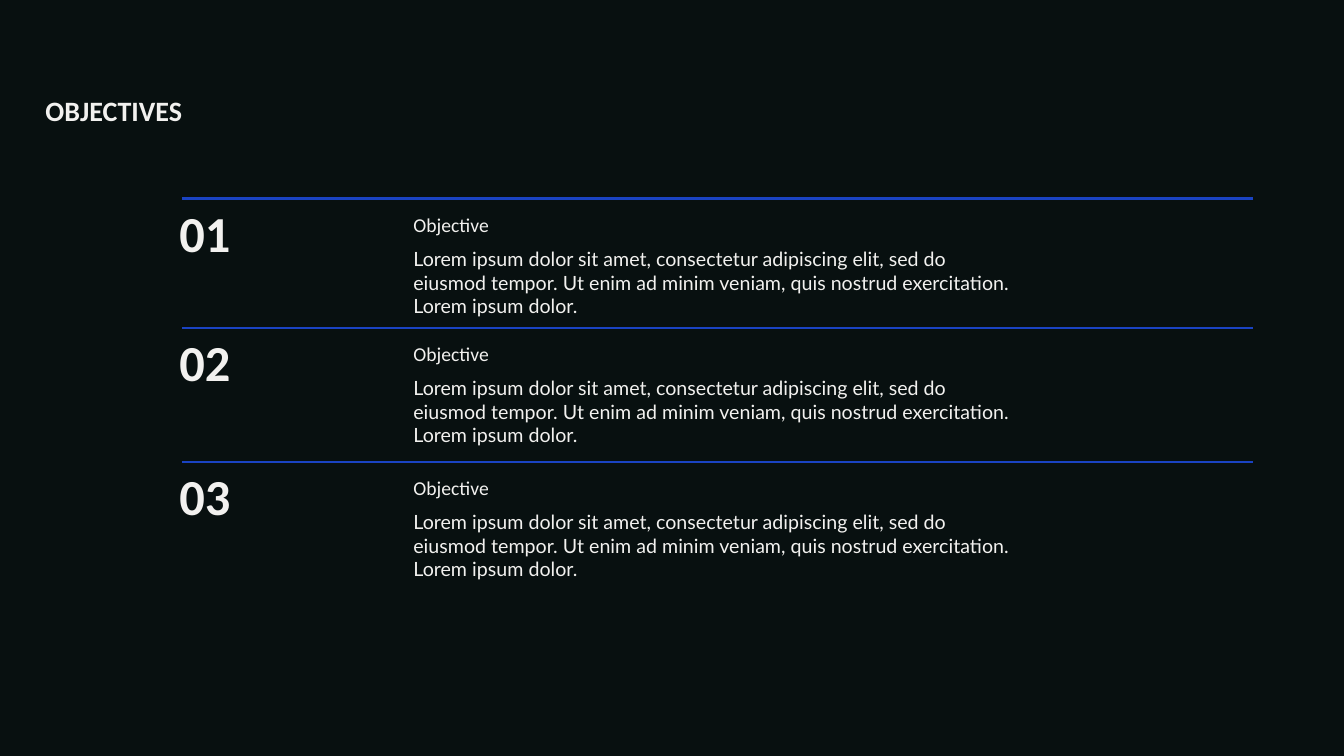
from lxml import etree
from pptx import Presentation
from pptx.dml.color import RGBColor
from pptx.enum import shapes, text
from pptx.oxml import ns
from pptx.util import Inches, Pt

TITLE = "OBJECTIVES"
DESCRIPTION = ("Lorem ipsum dolor sit amet, consectetur adipiscing elit, sed do "
               "eiusmod tempor. Ut enim ad minim veniam, quis nostrud exercitation. "
               "Lorem ipsum dolor.")
# number, heading, description, top of the row in inches
OBJECTIVES = [
    ("01", "Objective", DESCRIPTION, 1.97),
    ("02", "Objective", DESCRIPTION, 3.25),
    ("03", "Objective", DESCRIPTION, 4.58),
]
COLORS = {"background": "081010", "text": "F2F1EF", "rule": "1A43C2"}
RULE_LEFT, RULE_RIGHT = 1.81, 12.43
NUMBER_LEFT, DETAIL_LEFT = 1.78, 4.1


def color(name):
    return RGBColor.from_string(COLORS[name])


def write(box, words, size, font="Calibri", bold=False, spacing=1.0):
    """Fill a box with one left-aligned paragraph, without margins."""
    frame = box.text_frame
    frame.word_wrap = True
    frame.auto_size = text.MSO_AUTO_SIZE.NONE
    frame.vertical_anchor = text.MSO_ANCHOR.TOP
    frame.margin_left = frame.margin_right = 0
    frame.margin_top = frame.margin_bottom = 0
    paragraph = frame.paragraphs[0]
    paragraph.alignment = text.PP_ALIGN.LEFT
    paragraph.line_spacing = spacing
    paragraph.space_before = Pt(0)
    run = paragraph.add_run()
    run.text = words
    run.font.name = font
    run.font.size = Pt(size)
    run.font.bold = bold
    run.font.color.rgb = color("text")


def add_text(slide, left, top, width, height, words, size, **style):
    box = slide.shapes.add_textbox(Inches(left), Inches(top),
                                   Inches(width), Inches(height))
    write(box, words, size, **style)


def add_rule(slide, top):
    rule = slide.shapes.add_connector(
        shapes.MSO_CONNECTOR.STRAIGHT, Inches(RULE_LEFT), Inches(top),
        Inches(RULE_RIGHT), Inches(top))
    rule.line.color.rgb = color("rule")
    rule.line.width = Pt(1.5)
    etree.SubElement(rule._element.spPr, ns.qn("a:effectLst"))


def main():
    deck = Presentation()
    deck.slide_width, deck.slide_height = Inches(13.33), Inches(7.5)
    slide = deck.slides.add_slide(deck.slide_layouts[5])
    slide.background.fill.solid()
    slide.background.fill.fore_color.rgb = color("background")

    title = slide.shapes.title
    title.left, title.top = Inches(0.45), Inches(0.97)
    title.width, title.height = Inches(12.19), Inches(0.3)
    write(title, TITLE, 20, bold=True, spacing=0.9)

    for number, heading, description, top in OBJECTIVES:
        add_text(slide, NUMBER_LEFT, top + 0.1, 1.36, 0.55, number, 36,
                 bold=True, spacing=0.9)
        add_text(slide, DETAIL_LEFT, top + 0.14, 4.97, 0.24, heading, 14)
        add_text(slide, DETAIL_LEFT, top + 0.48, 5.98, 0.71, description, 14,
                 font="Lato")
        add_rule(slide, top)

    deck.save("out.pptx")


if __name__ == "__main__":
    main()
